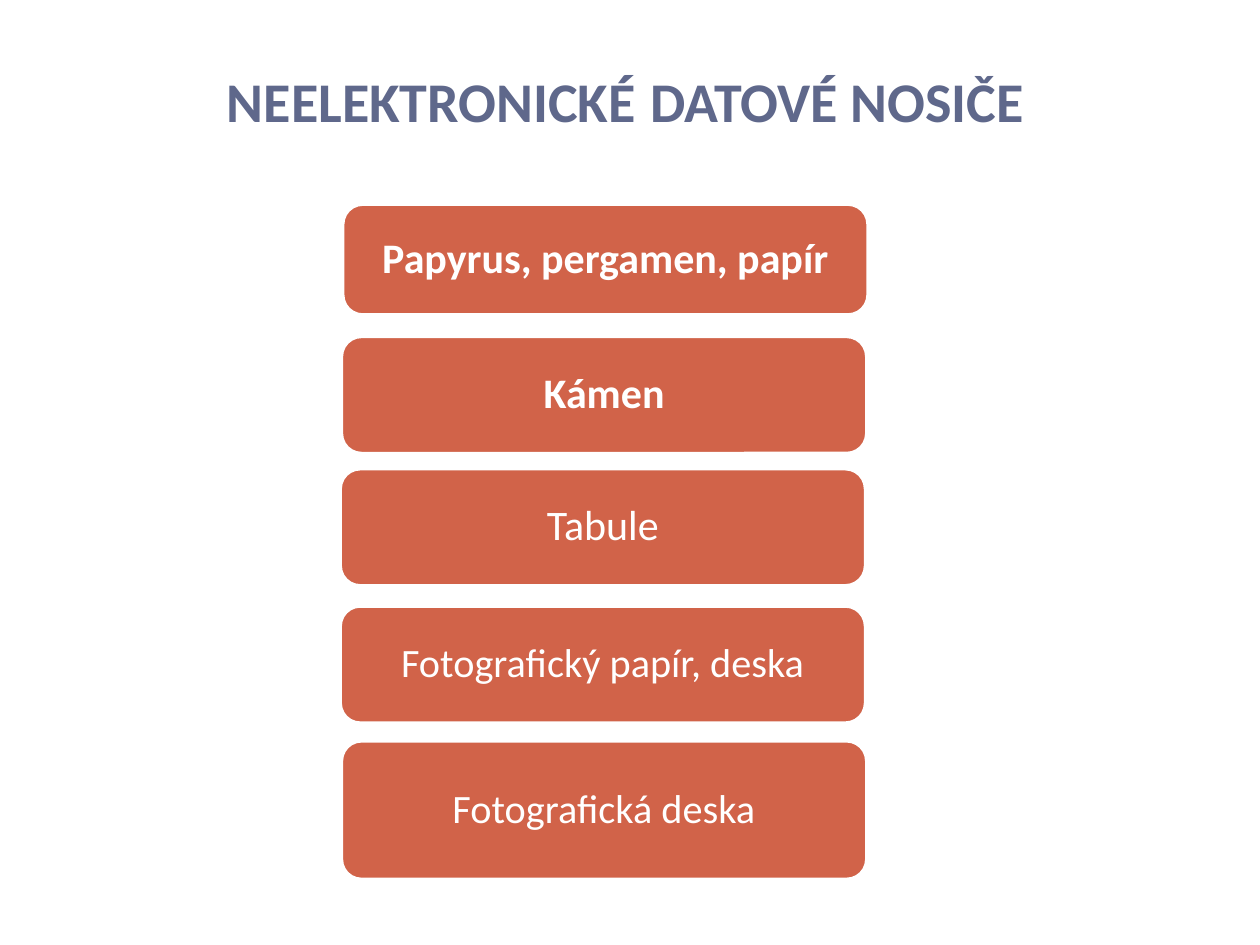
from dataclasses import dataclass

from pptx import Presentation
from pptx.dml.color import RGBColor
from pptx.enum.shapes import MSO_SHAPE
from pptx.enum.text import MSO_ANCHOR, PP_ALIGN
from pptx.util import Inches, Pt

# Content: title runs (text, size)
TITLE = [("NEELEKTRONICKÉ", 32), (" ", 36), ("DATOVÉ NOSIČE", 32)]
# Cards: text, left, top, height, size, bold
CARDS = [
    ("Papyrus, pergamen, papír", 2.72, 1.62, 0.88, 24, True),
    ("Kámen", 2.71, 2.67, 0.93, 24, True),
    ("Tabule", 2.70, 3.72, 0.93, 24, False),
    ("Fotografický papír, deska", 2.70, 4.81, 0.93, 23, False),
    ("Fotografická deska", 2.71, 5.88, 1.10, 23, False),
]
CARD_WIDTH = 4.17
CORNER_RADIUS = 0.16


@dataclass(frozen=True)
class Theme:
    font: str = "Calibri"
    title: RGBColor = RGBColor(0x5F, 0x68, 0x8B)
    card: RGBColor = RGBColor(0xD1, 0x63, 0x49)
    white: RGBColor = RGBColor(0xFF, 0xFF, 0xFF)
    outline: Pt = Pt(2)


THEME = Theme()


def apply(target, values):
    for name, value in values.items():
        setattr(target, name, value)


def add_span(para, text, size, bold, color):
    span = para.add_run()
    span.text = text
    apply(span.font, {"name": THEME.font, "size": Pt(size), "bold": bold})
    span.font.color.rgb = color


def add_title(page):
    box = page.shapes.add_textbox(Inches(0.28), Inches(0.44), Inches(9.37), Inches(0.68))
    apply(box.text_frame, {"word_wrap": True, "vertical_anchor": MSO_ANCHOR.BOTTOM})
    para = box.text_frame.paragraphs[0]
    apply(para, {"alignment": PP_ALIGN.CENTER, "line_spacing": Pt(20)})
    for text, size in TITLE:
        add_span(para, text, size, True, THEME.title)


def add_card(page, text, left, top, height, size, bold):
    card = page.shapes.add_shape(
        MSO_SHAPE.ROUNDED_RECTANGLE,
        Inches(left), Inches(top), Inches(CARD_WIDTH), Inches(height),
    )
    card.adjustments[0] = CORNER_RADIUS / height
    card.shadow.inherit = False
    card.fill.solid()
    card.fill.fore_color.rgb = THEME.card
    card.line.color.rgb = THEME.white
    card.line.width = THEME.outline
    apply(card.text_frame, {
        "word_wrap": True, "vertical_anchor": MSO_ANCHOR.MIDDLE,
        "margin_left": Inches(0.14), "margin_right": Inches(0.14),
        "margin_top": Inches(0.1), "margin_bottom": Inches(0.1),
    })
    para = card.text_frame.paragraphs[0]
    apply(para, {"alignment": PP_ALIGN.CENTER, "line_spacing": 0.9})
    add_span(para, text, size, bold, THEME.white)


def main():
    deck = Presentation()
    apply(deck, {"slide_width": Inches(10), "slide_height": Inches(7.5)})
    page = deck.slides.add_slide(deck.slide_layouts[6])
    page.background.fill.solid()
    page.background.fill.fore_color.rgb = THEME.white
    add_title(page)
    for card in CARDS:
        add_card(page, *card)
    deck.save("out.pptx")


if __name__ == "__main__":
    main()
